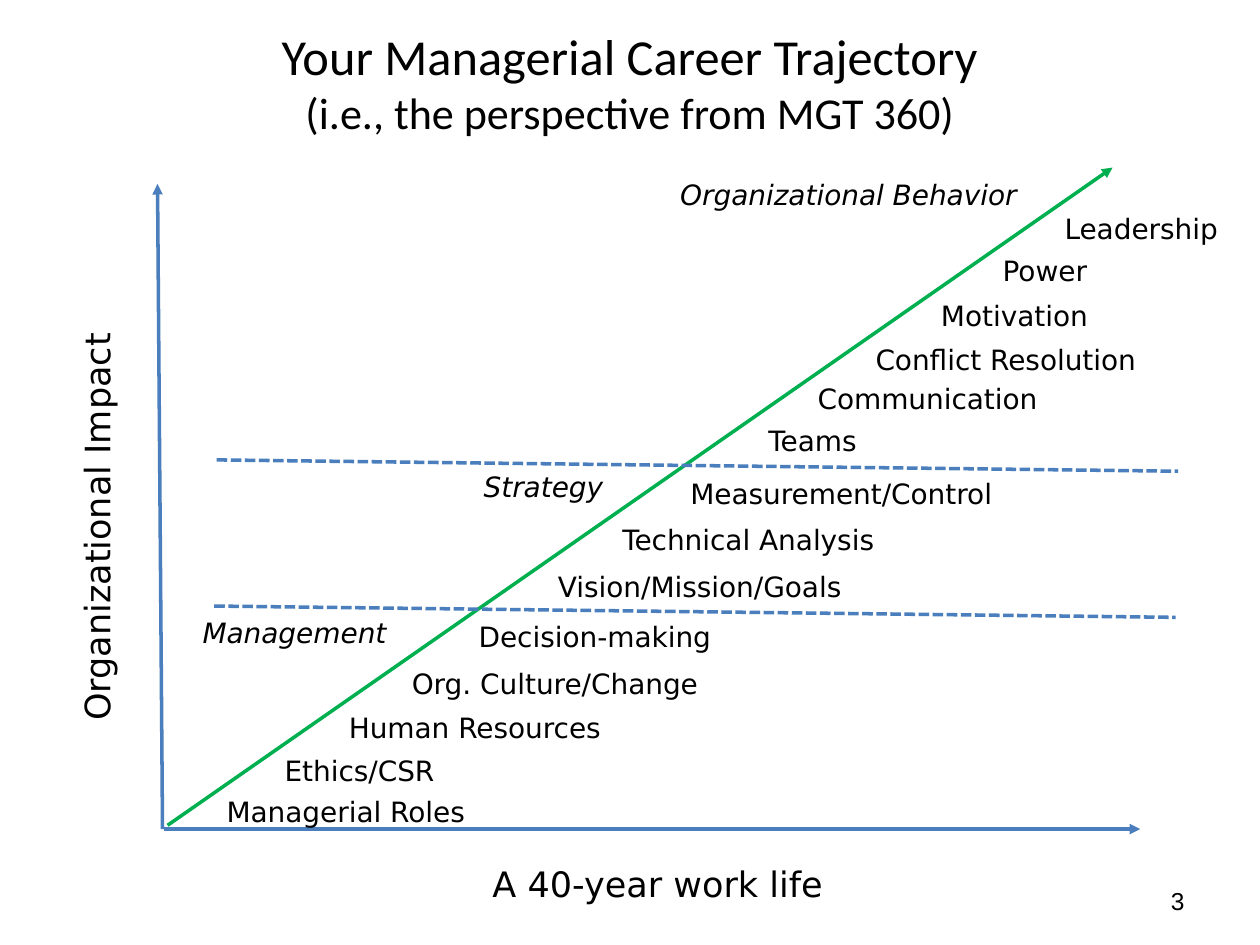
"""Build the managerial career trajectory slide."""
from lxml import etree
from pptx import Presentation, util as u
from pptx.dml.color import RGBColor
from pptx.enum import dml, shapes, text
from pptx.oxml.ns import qn

BLACK = RGBColor(0x00, 0x00, 0x00)
BLUE = RGBColor(0x4B, 0x7E, 0xBC)
GREEN = RGBColor(0x00, 0xB0, 0x50)
ALIGN = text.PP_ALIGN

deck = Presentation()
deck.slide_width, deck.slide_height = u.Inches(10), u.Inches(7.5)
page = deck.slides.add_slide(deck.slide_layouts[6])
column, row = deck.slide_width / 10, deck.slide_height / 7.5


def write(words, left, top, width, height=0.37, size=16, face="DejaVu Sans",
          italic=None, align=ALIGN.LEFT, anchor=text.MSO_ANCHOR.TOP):
    box = page.shapes.add_textbox(int(left * column), int(top * row),
                                  int(width * column), int(height * row))
    frame = box.text_frame
    frame.word_wrap = True
    frame.vertical_anchor = anchor
    para = frame.paragraphs[0]
    para.text = words
    para.alignment = align
    para.font.size = u.Pt(size)
    para.font.name = face
    para.font.italic = italic
    para.font.color.rgb = BLACK
    return box


def draw(start, end, color, arrow=True):
    line = page.shapes.add_connector(
        shapes.MSO_CONNECTOR.STRAIGHT, int(start[0] * column), int(start[1] * row),
        int(end[0] * column), int(end[1] * row))
    line.line.color.rgb = color
    line.line.width = u.Pt(2)
    if arrow:
        etree.SubElement(line.line._get_or_add_ln(), qn("a:tailEnd"), type="triangle")
    else:
        line.line.dash_style = dml.MSO_LINE.SQUARE_DOT
    etree.SubElement(line._element.spPr, qn("a:effectLst"))


title = write("Your Managerial Career Trajectory\v(i.e., the perspective from MGT 360)",
              0.5, 0.3, 9, 0.7, 28.8, "Calibri", align=ALIGN.CENTER,
              anchor=text.MSO_ANCHOR.MIDDLE)
title.text_frame.paragraphs[0].runs[1].font.size = u.Pt(25.2)
write("3", 7.17, 6.95, 2.33, 0.4, 14, "Arial", align=ALIGN.RIGHT,
      anchor=text.MSO_ANCHOR.MIDDLE)

draw((1.3, 6.58), (9.05, 6.58), BLUE)
draw((1.29, 6.58), (1.25, 1.46), BLUE)
draw((1.33, 6.55), (8.83, 1.33), GREEN)

write("A 40-year work life", 3.81, 6.8, 2.88, 0.44, 20)
impact = write("Organizational Impact", -0.9, 3.93, 3.34, 0.44, 20)
impact.rotation = 270

for stage, left, top, width in [
    ("Management", 1.51, 4.84, 2.13),
    ("Strategy", 3.74, 3.68, 2.13),
    ("Organizational Behavior", 5.3, 1.36, 2.92),
]:
    write(stage, left, top, width, italic=True)

for topic, left, top, width in [
    ("Managerial Roles", 1.7, 6.26, 2.13),
    ("Ethics/CSR", 2.16, 5.93, 2.29),
    ("Human Resources", 2.67, 5.59, 2.29),
    ("Org. Culture/Change", 3.17, 5.24, 3.07),
    ("Decision-making", 3.7, 4.87, 2.75),
    ("Vision/Mission/Goals", 4.33, 4.47, 2.75),
    ("Technical Analysis", 4.84, 4.1, 2.75),
    ("Measurement/Control", 5.38, 3.73, 2.75),
    ("Teams", 6, 3.31, 2.75),
    ("Communication", 6.39, 2.98, 2.75),
    ("Conflict Resolution", 6.85, 2.67, 2.29),
    ("Motivation", 7.37, 2.32, 2.63),
    ("Power", 7.86, 1.96, 2.14),
    ("Leadership", 8.35, 1.63, 1.48),
]:
    write(topic, left, top, width)

for left, top in [(1.7, 4.81), (1.72, 3.65)]:
    draw((left, top), (left + 7.63, top + 0.09), BLUE, arrow=False)

deck.save("out.pptx")
